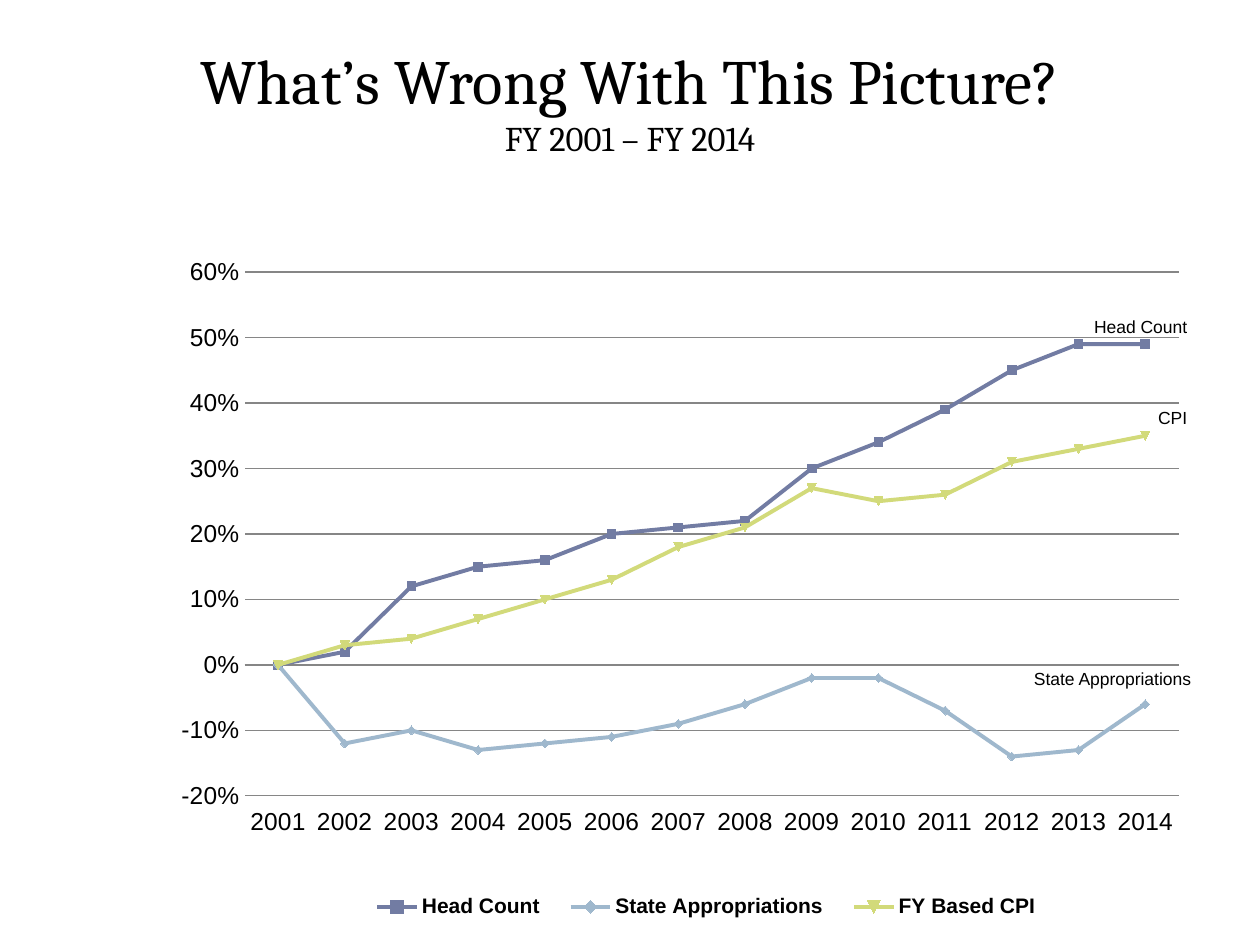
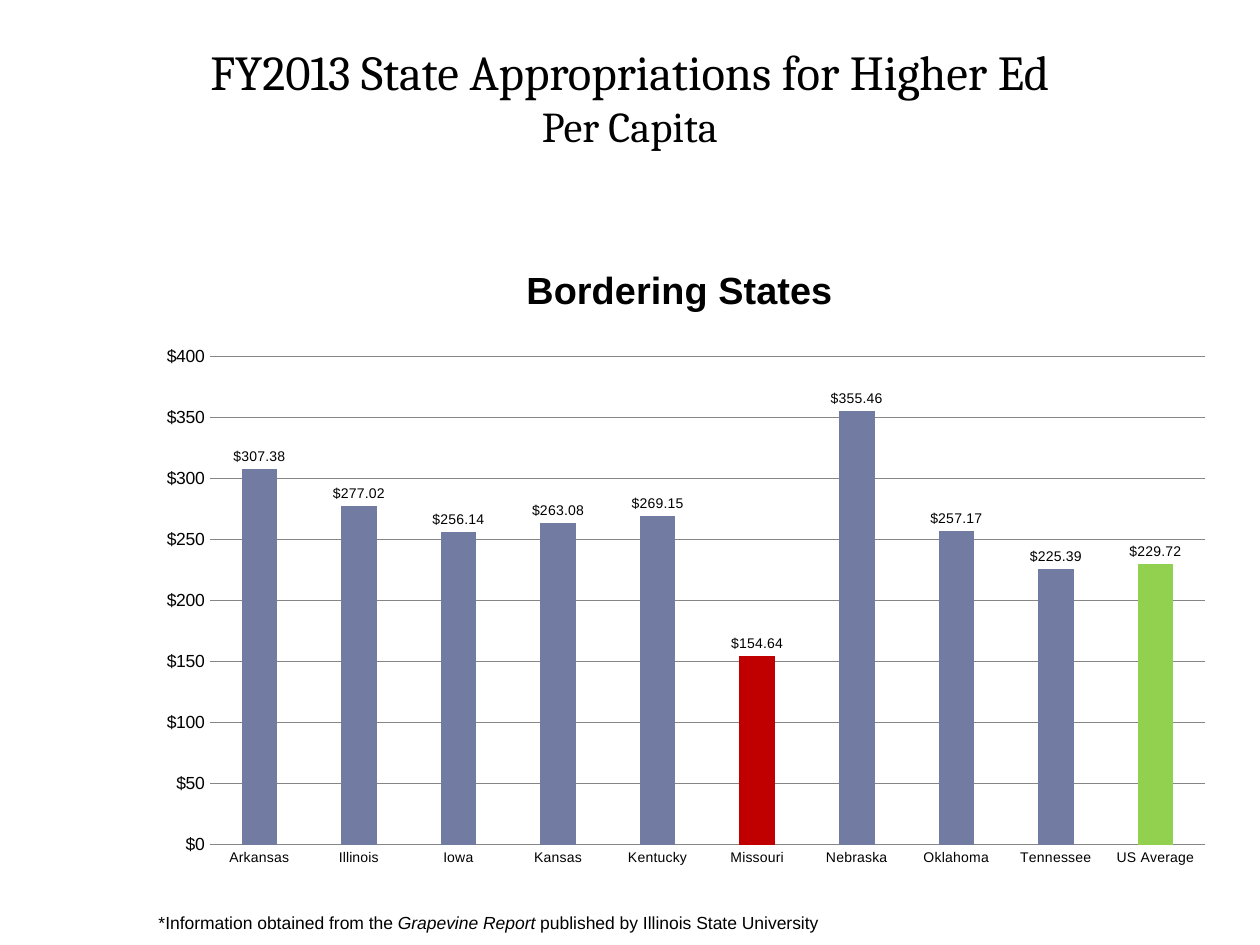
from lxml import etree
from pptx import Presentation, util as u
from pptx.chart.data import CategoryChartData
from pptx.dml.color import RGBColor
from pptx.enum import chart as ch, text
from pptx.oxml.ns import qn

# Content
HEADS = [
    [("What’s Wrong With This Picture?", 36), ("FY 2001 – FY 2014", 19.8)],
    [("FY2013 State Appropriations for Higher Ed", 27.9), ("Per Capita", 24.3)],
]
YEARS = [str(year) for year in range(2001, 2015)]
TRENDS = [
    ("Head Count", "727CA3",
     [0, .02, .12, .15, .16, .2, .21, .22, .3, .34, .39, .45, .49, .49]),
    ("State Appropriations", "9FB8CD",
     [0, -.12, -.1, -.13, -.12, -.11, -.09, -.06, -.02, -.02, -.07, -.14, -.13, -.06]),
    ("FY Based CPI", "D2DA7A",
     [0, .03, .04, .07, .1, .13, .18, .21, .27, .25, .26, .31, .33, .35]),
]
TAGS = [
    ("Head Count", (8.52, 2.46, 1, .27)),
    ("CPI", (8.52, 3.18, 1, .27)),
    ("State Appropriations", (7.99, 5.25, 1.56, .27)),
]
STATES = {
    "Arkansas": 307.38, "Illinois": 277.02, "Iowa": 256.14, "Kansas": 263.08,
    "Kentucky": 269.15, "Missouri": 154.64, "Nebraska": 355.46,
    "Oklahoma": 257.17, "Tennessee": 225.39, "US Average": 229.72,
}
MARKED = {"Missouri": "C00000", "US Average": "92D050"}
SOURCE = [("*Information obtained from the ", False), ("Grapevine Report ", True),
          ("published by Illinois State University", False)]

# Shared style
BLACK, GRID, BAR = "000000", "868686", "727CA3"
HEAD, BODY = "Cambria", "Arial"


def rgb(code):
    return RGBColor.from_string(code)


def style(font, size, face=BODY, bold=False):
    font.size, font.name, font.bold = u.Pt(size), face, bold
    font.color.rgb = rgb(BLACK)


def box(at):
    return [u.Inches(n) for n in at]


def start(deck, lines):
    """Add a slide with its centred two-line title."""
    slide = deck.slides.add_slide(deck.slide_layouts[5])
    title = slide.shapes.title
    title.left, title.top, title.width, title.height = box((.5, .3, 9, 1.25))
    frame = title.text_frame
    frame.text = "\n".join(line for line, size in lines)
    frame.auto_size = text.MSO_AUTO_SIZE.NONE
    frame.vertical_anchor = text.MSO_ANCHOR.TOP
    frame.margin_top = u.Inches(.03)
    for para, (line, size) in zip(frame.paragraphs, lines):
        para.alignment = text.PP_ALIGN.CENTER
        style(para.runs[0].font, size, HEAD)
    return slide


def note(slide, at, parts, align):
    """Add a small text box from (words, italic) parts."""
    frame = slide.shapes.add_textbox(*box(at)).text_frame
    frame.word_wrap = True
    para = frame.paragraphs[0]
    para.alignment = align
    for words, slant in parts:
        run = para.add_run()
        run.text = words
        style(run.font, 10)
        run.font.italic = slant


def place(node, spot, index, inner=False):
    """Fix a chart part at shares of the chart's size."""
    old = node.find(qn("c:layout"))
    if old is not None:
        node.remove(old)
    layout = etree.Element(qn("c:layout"))
    manual = etree.SubElement(layout, qn("c:manualLayout"))
    rows = [("layoutTarget", "inner")] if inner else []
    rows += [("xMode", "edge"), ("yMode", "edge"), *zip("xywh", spot)]
    for key, val in rows:
        etree.SubElement(manual, qn("c:" + key)).set("val", str(val))
    node.insert(index, layout)


def plot(slide, kind, at, cats, series, area, scale, form, sizes):
    """Add a chart with plain axes and grey gridlines."""
    data = CategoryChartData()
    data.categories = cats
    for name, vals in series:
        data.add_series(name, vals)
    chart = slide.shapes.add_chart(kind, *box(at), data).chart
    style(chart.font, 18)
    chart.has_legend = chart.has_title = False
    cat, val = chart.category_axis, chart.value_axis
    for axis, size in zip((cat, val), sizes):
        axis.major_tick_mark = axis.minor_tick_mark = ch.XL_TICK_MARK.NONE
        style(axis.tick_labels.font, size)
    cat.has_major_gridlines = False
    cat.format.line.color.rgb = rgb(GRID)
    val.minimum_scale, val.maximum_scale, val.major_unit = scale
    val.has_major_gridlines = True
    val.major_gridlines.format.line.color.rgb = rgb(GRID)
    val.format.line.fill.background()
    val.tick_labels.number_format = form
    val.tick_labels.number_format_is_linked = False
    place(chart.plots[0]._element.getparent(), area, 0, True)
    chart.plots[0].vary_by_categories = False
    return chart


def trends(deck):
    slide = start(deck, HEADS[0])
    chart = plot(slide, ch.XL_CHART_TYPE.LINE_MARKERS, (1.08, 2, 8.62, 5.33), YEARS,
                 [(name, vals) for name, hue, vals in TRENDS],
                 (.1, .03, .86, .78), (-.2, .6, .1), "0%", (14, 14))
    # Years sit below the plot and start on its edge
    chart.category_axis.tick_label_position = ch.XL_TICK_LABEL_POSITION.LOW
    for cross in chart.value_axis._element.findall(qn("c:crossBetween")):
        cross.set("val", "midCat")
    for line, (name, hue, vals) in zip(chart.series, TRENDS):
        line.smooth = False
        line.format.line.width = u.Pt(2.25)
        line.format.line.color.rgb = rgb(hue)
        mark = line.marker.format
        mark.fill.solid()
        mark.fill.fore_color.rgb = rgb(hue)
        mark.line.color.rgb = rgb(hue)
    # Legend
    chart.has_legend = True
    legend = chart.legend
    legend.position = ch.XL_LEGEND_POSITION.BOTTOM
    legend.include_in_layout = False
    style(legend.font, 12, bold=True)
    place(legend._element, (.2, .95, .65, .05), 1)
    # Line labels
    for words, at in TAGS:
        note(slide, at, [(words, False)], text.PP_ALIGN.RIGHT)


def states(deck):
    slide = start(deck, HEADS[1])
    chart = plot(slide, ch.XL_CHART_TYPE.COLUMN_CLUSTERED, (1.05, 2, 8.78, 5.17),
                 list(STATES), [("Series 1", list(STATES.values()))],
                 (.07, .16, .9, .75), (0, 400, 50), '"$"#,##0', (8, 10))
    # Chart title
    chart.has_title = True
    frame = chart.chart_title.text_frame
    frame.text = "Bordering States"
    style(frame.paragraphs[0].runs[0].font, 21.6, bold=True)
    place(chart.chart_title._element, (.35, .01), 1)
    # Columns, two of them marked
    bars = chart.plots[0]
    bars.gap_width, bars.overlap = 180, 75
    row = bars.series[0]
    row.invert_if_negative = False
    row.format.fill.solid()
    row.format.fill.fore_color.rgb = rgb(BAR)
    for i, name in enumerate(STATES):
        if name in MARKED:
            fill = row.points[i].format.fill
            fill.solid()
            fill.fore_color.rgb = rgb(MARKED[name])
    # Values above the columns
    labels = row.data_labels
    labels.show_value = True
    labels.number_format = '"$"#,##0.00'
    labels.number_format_is_linked = False
    labels.position = ch.XL_LABEL_POSITION.OUTSIDE_END
    style(labels.font, 8)
    note(slide, (1.16, 7.19, 8.37, .35), SOURCE, text.PP_ALIGN.LEFT)


def main():
    deck = Presentation()
    deck.slide_width, deck.slide_height = u.Inches(10), u.Inches(7.5)
    trends(deck)
    states(deck)
    deck.save("out.pptx")


if __name__ == "__main__":
    main()
